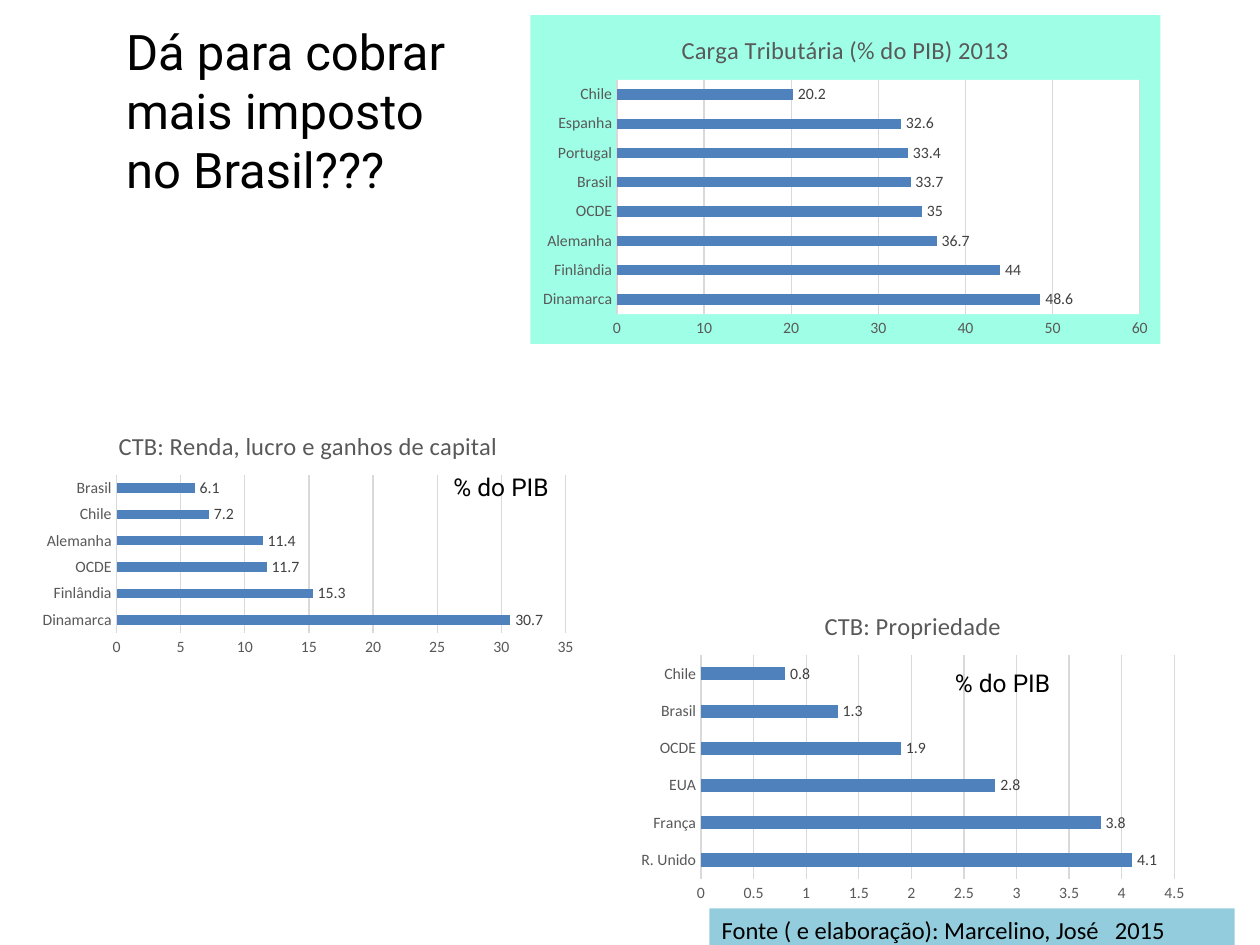
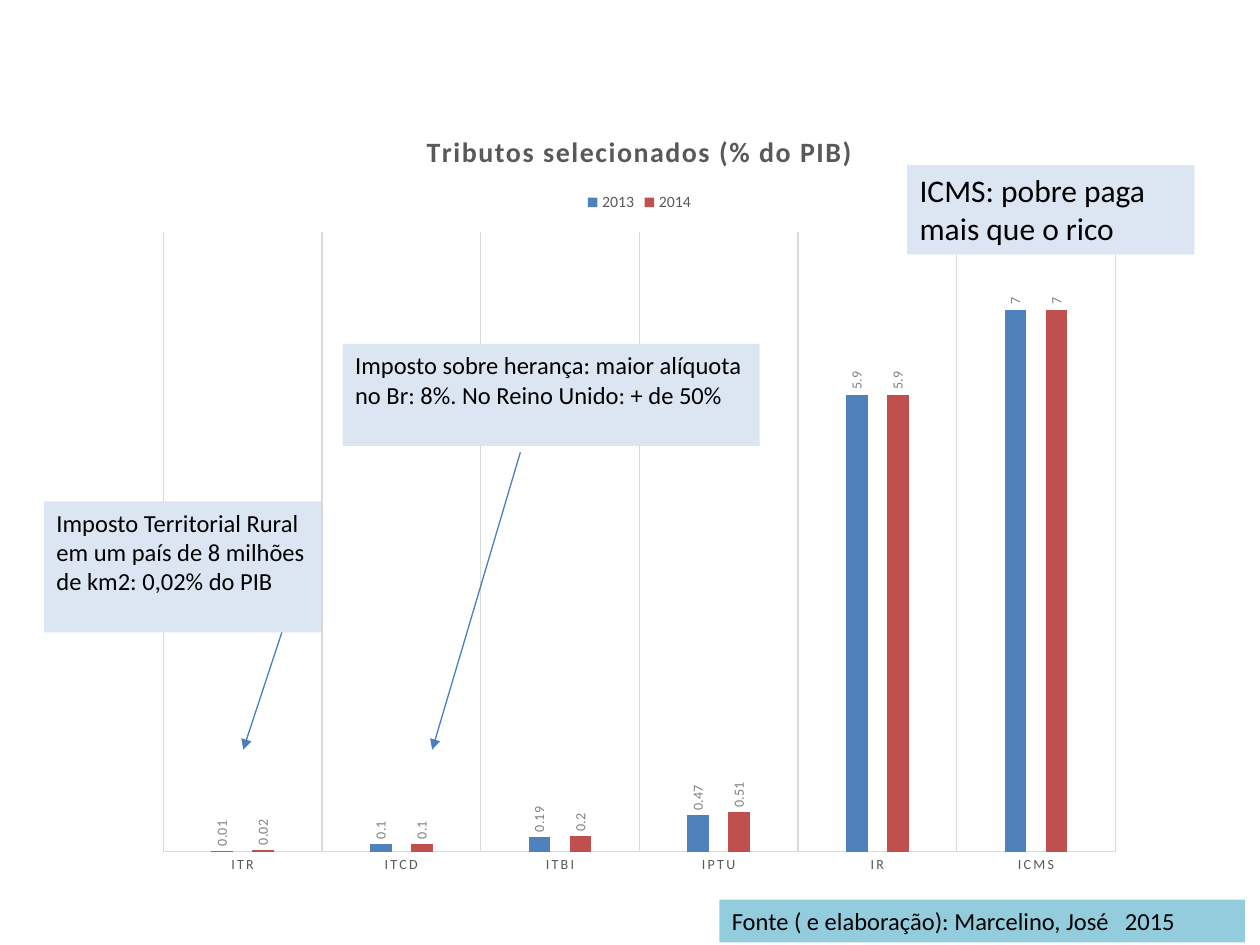
from lxml import etree
from pptx import Presentation
from pptx.chart.data import CategoryChartData
from pptx.dml.color import RGBColor
from pptx.enum.chart import XL_CHART_TYPE as ChartType
from pptx.enum.chart import XL_LABEL_POSITION as LabelPosition
from pptx.enum.chart import XL_LEGEND_POSITION as LegendPosition
from pptx.enum.chart import XL_TICK_MARK as TickMark
from pptx.enum.shapes import MSO_CONNECTOR as Connector
from pptx.enum.shapes import MSO_SHAPE as Preset
from pptx.enum.text import MSO_ANCHOR as Anchor
from pptx.enum.text import MSO_AUTO_SIZE as AutoSize
from pptx.enum.text import PP_ALIGN as Align
from pptx.oxml import parse_xml
from pptx.oxml.ns import nsdecls, qn
from pptx.util import Inches, Pt

BLACK = RGBColor(0x00, 0x00, 0x00)
WHITE = RGBColor(0xFF, 0xFF, 0xFF)
MINT = RGBColor(0x9F, 0xFF, 0xE6)
BLUE = RGBColor(0x4F, 0x81, 0xBD)
RED = RGBColor(0xC0, 0x50, 0x4D)
ARROW_BLUE = RGBColor(0x4B, 0x7E, 0xBC)
NOTE_BLUE = RGBColor(0xDC, 0xE6, 0xF2)
SOURCE_BLUE = RGBColor(0x93, 0xCD, 0xDD)
GRID_GRAY = RGBColor(0xD9, 0xD9, 0xD9)
AXIS_GRAY = RGBColor(0x59, 0x59, 0x59)
LABEL_GRAY = RGBColor(0x40, 0x40, 0x40)
PALE_LABEL_GRAY = RGBColor(0x80, 0x80, 0x80)

TITLE_ONLY, BLANK = 5, 6
FRAME_FORMAT = {"word_wrap": True, "auto_size": AutoSize.NONE,
                "vertical_anchor": Anchor.TOP}


def set_values(target, values):
    for name, value in values.items():
        setattr(target, name, value)


def set_font(font, size, color, name="Calibri", bold=False):
    set_values(font, {"size": Pt(size), "name": name, "bold": bold})
    font.color.rgb = color


def set_line(line, color, width=0.75):
    line.color.rgb = color
    line.width = Pt(width)


def area_format(color):
    """Chart area properties: a solid fill or none, and no border."""
    fill = (f'<a:solidFill><a:srgbClr val="{color}"/></a:solidFill>'
            if color else "<a:noFill/>")
    return parse_xml(f'<c:spPr {nsdecls("c", "a")}>{fill}'
                     '<a:ln><a:noFill/></a:ln></c:spPr>')


class Deck:
    def __init__(self):
        self.presentation = Presentation()
        set_values(self.presentation, {"slide_width": Inches(10),
                                       "slide_height": Inches(7.5)})
        self.slide = None

    def new_slide(self, layout):
        layouts = self.presentation.slide_layouts
        self.slide = self.presentation.slides.add_slide(layouts[layout])

    def set_text(self, shape, text, size, font_name):
        frame = shape.text_frame
        set_values(frame, FRAME_FORMAT)
        paragraph = frame.paragraphs[0]
        paragraph.alignment = Align.LEFT
        run = paragraph.add_run()
        run.text = text
        set_font(run.font, size, BLACK, font_name)
        return paragraph

    def title(self, text, *box):
        shape = self.slide.shapes.title
        sides = ("left", "top", "width", "height")
        set_values(shape, dict(zip(sides, map(Inches, box))))
        self.set_text(shape, text, 28, "Roboto")

    def text(self, text, *box):
        shape = self.slide.shapes.add_textbox(*map(Inches, box))
        self.set_text(shape, text, 14, "Roboto")

    def note(self, text, *box, size=14, color=NOTE_BLUE):
        shape = self.slide.shapes.add_shape(Preset.RECTANGLE, *map(Inches, box))
        shape.shadow.inherit = False
        shape.fill.solid()
        shape.fill.fore_color.rgb = color
        shape.line.fill.background()
        return self.set_text(shape, text, size, "Calibri")

    def source(self, left, top):
        paragraph = self.note("Fonte ( e elaboração): Marcelino, José\t2015",
                              left, top, 4.17, 0.34, color=SOURCE_BLUE)
        tabs = etree.SubElement(paragraph._p.get_or_add_pPr(), qn("a:tabLst"))
        etree.SubElement(tabs, qn("a:tab"), pos=str(Inches(3.12)), algn="l")

    def arrow(self, *ends):
        connector = self.slide.shapes.add_connector(
            Connector.STRAIGHT, *map(Inches, ends))
        set_line(connector.line, ARROW_BLUE)
        properties = connector._element.spPr
        etree.SubElement(properties.find(qn("a:ln")), qn("a:tailEnd"),
                         type="triangle")
        etree.SubElement(properties, qn("a:effectLst"))

    def chart(self, kind, title, categories, series, box, maximum, step,
              colors, gap, label_size, label_color, title_size=14,
              title_bold=False):
        data = CategoryChartData()
        data.categories = categories
        for name, values in series.items():
            data.add_series(name, values)
        chart = self.slide.shapes.add_chart(
            kind, *map(Inches, box), data).chart
        set_font(chart.font, 10, BLACK)
        chart.has_legend = False
        chart.has_title = True
        chart.chart_title.include_in_layout = False
        run = chart.chart_title.text_frame.paragraphs[0].add_run()
        run.text = title
        set_font(run.font, title_size, AXIS_GRAY, bold=title_bold)

        plot = chart.plots[0]
        set_values(plot, {"gap_width": gap, "vary_by_categories": False})
        for bars, color in zip(plot.series, colors):
            bars.format.fill.solid()
            bars.format.fill.fore_color.rgb = color
            bars.invert_if_negative = False
            labels = bars.data_labels
            set_values(labels, {"show_value": True,
                                "position": LabelPosition.OUTSIDE_END})
            set_font(labels.font, label_size, label_color)

        for axis in (chart.category_axis, chart.value_axis):
            set_values(axis, {"major_tick_mark": TickMark.NONE,
                              "minor_tick_mark": TickMark.NONE})
            set_font(axis.tick_labels.font, 9, AXIS_GRAY)
        set_line(chart.category_axis.format.line, GRID_GRAY)
        set_values(chart.value_axis, {"minimum_scale": 0, "major_unit": step,
                                      "maximum_scale": maximum})
        return chart

    def bar_chart(self, title, values, box, maximum, step, fill=None,
                  plot_fill=None):
        chart = self.chart(
            ChartType.BAR_CLUSTERED, title, list(values),
            {"Series 1": list(values.values())}, box, maximum, step,
            colors=[BLUE], gap=182, label_size=9, label_color=LABEL_GRAY)
        set_line(chart.value_axis.major_gridlines.format.line, GRID_GRAY)
        chart.value_axis.format.line.fill.background()
        body = chart._chartSpace.chart
        body.addnext(area_format(fill))
        body.plotArea.append(area_format(plot_fill))

    def column_chart(self, title, categories, series, box, maximum, step):
        chart = self.chart(
            ChartType.COLUMN_CLUSTERED, title, categories, series, box,
            maximum, step, colors=[BLUE, RED], gap=444, label_size=8,
            label_color=PALE_LABEL_GRAY, title_size=16, title_bold=True)
        chart._chartSpace.chart.addnext(area_format(None))
        chart.plots[0].overlap = -90
        set_values(chart.value_axis, {"visible": False,
                                      "has_major_gridlines": False})
        category_axis = chart.category_axis
        category_axis.has_major_gridlines = True
        set_line(category_axis.major_gridlines.format.line, GRID_GRAY)
        category_axis.tick_labels.font.size = Pt(8)
        chart.has_legend = True
        set_values(chart.legend, {"position": LegendPosition.TOP,
                                  "include_in_layout": False})
        set_font(chart.legend.font, 9, AXIS_GRAY)
        title_run = chart.chart_title.text_frame.paragraphs[0].runs[0]
        title_run._r.get_or_add_rPr().set("spc", "100")
        for properties in category_axis._element.xpath("./c:txPr//a:defRPr"):
            properties.set("spc", "120")
        for bars in chart.plots[0].series:
            for body in bars.data_labels._element.xpath("./c:txPr/a:bodyPr"):
                body.set("rot", "-5400000")
                body.set("vert", "horz")


def tax_burden_slide(deck):
    deck.new_slide(TITLE_ONLY)
    deck.title("Dá para cobrar mais imposto no Brasil???",
               0.9, 0.12, 3.07, 1.52)
    deck.bar_chart(
        "Carga Tributária (% do PIB) 2013",
        {"Dinamarca": 48.6, "Finlândia": 44, "Alemanha": 36.7, "OCDE": 35,
         "Brasil": 33.7, "Portugal": 33.4, "Espanha": 32.6, "Chile": 20.2},
        (4.21, 0.12, 5, 2.61), 60, 10, fill=MINT, plot_fill=WHITE)
    deck.bar_chart(
        "CTB: Renda, lucro e ganhos de capital",
        {"Dinamarca": 30.7, "Finlândia": 15.3, "OCDE": 11.7,
         "Alemanha": 11.4, "Chile": 7.2, "Brasil": 6.1},
        (0.25, 3.28, 4.39, 1.97), 35, 5)
    deck.bar_chart(
        "CTB: Propriedade",
        {"R. Unido": 4.1, "França": 3.8, "EUA": 2.8, "OCDE": 1.9,
         "Brasil": 1.3, "Chile": 0.8},
        (5, 4.69, 4.49, 2.52), 4.5, 0.5)
    for left, top in ((3.5, 3.7), (7.48, 5.25)):
        deck.text("% do PIB", left, top, 1.73, 0.34)
    deck.source(5.63, 7.21)


def selected_taxes_slide(deck):
    deck.new_slide(BLANK)
    deck.column_chart(
        "Tributos selecionados (% do PIB)",
        ["ITR", "ITCD", "ITBI", "IPTU", "IR", "ICMS"],
        {"2013": [0.01, 0.1, 0.19, 0.47, 5.9, 7],
         "2014": [0.02, 0.1, 0.2, 0.51, 5.9, 7]},
        (1.14, 0.84, 7.87, 6.22), 8, 1)
    deck.arrow(2.24, 5.01, 1.93, 5.95)
    deck.note("Imposto Territorial Rural em um país de 8 milhões de km2: "
              "0,02% do PIB", 0.35, 3.98, 2.2, 1.04)
    deck.arrow(4.13, 3.59, 3.43, 5.95)
    deck.note("Imposto sobre herança: maior alíquota no Br: 8%. "
              "No Reino Unido: + de 50%", 2.72, 2.73, 3.31, 0.81)
    deck.note("ICMS: pobre paga mais que o rico", 7.2, 1.31, 2.28, 0.71,
              size=18)
    deck.source(5.71, 7.14)


def main():
    deck = Deck()
    tax_burden_slide(deck)
    selected_taxes_slide(deck)
    deck.presentation.save("out.pptx")


if __name__ == "__main__":
    main()
